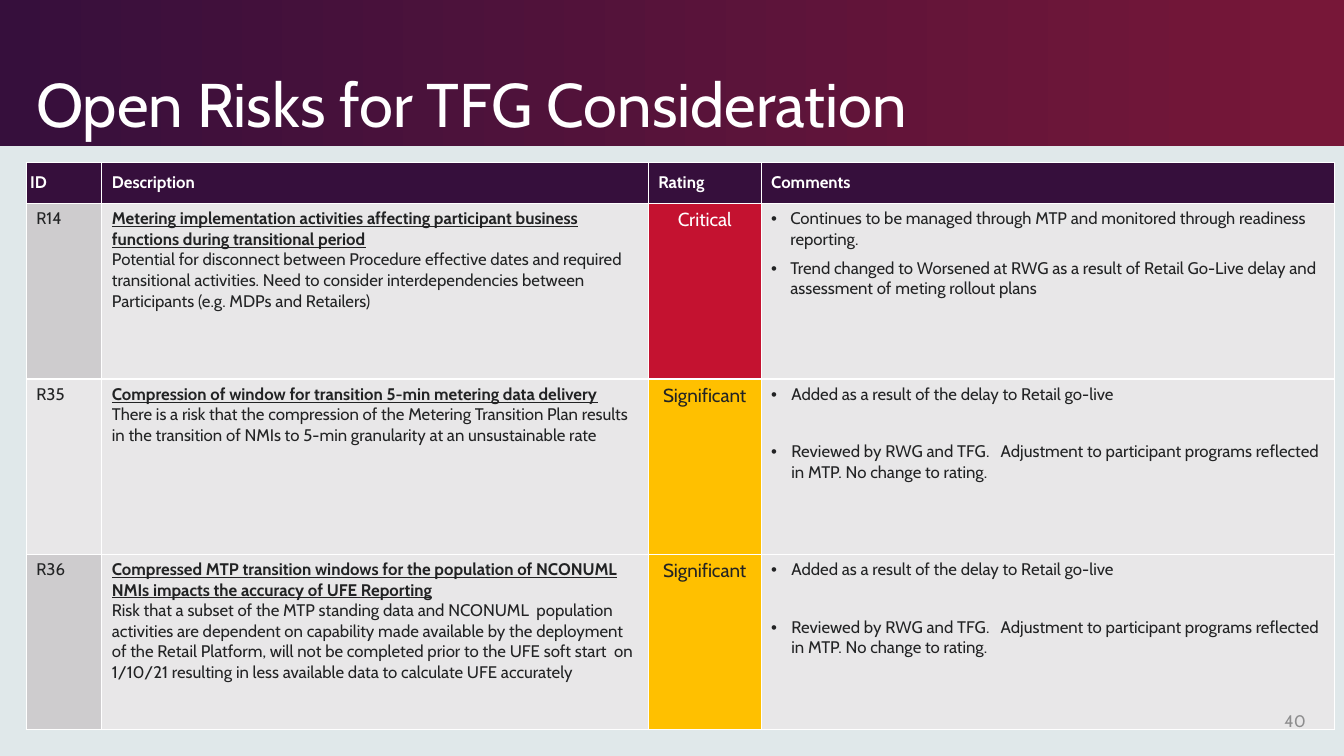
from lxml import etree
from pptx import Presentation
from pptx.dml.color import RGBColor
from pptx.enum import shapes, text
from pptx.oxml import ns
from pptx.util import Inches, Pt

FONT = "Cabin"
PLUM, WHITE, INK = "360F3C", "FFFFFF", "222324"
PALE, GREY, RED, AMBER = "E8E7E8", "CECCCE", "C41230", "FFC000"
COLUMN_WIDTHS = [0.75, 5.42, 1.12, 5.69]
HEADER_HEIGHT, RISK_HEIGHT = 0.41, 1.74
HEADINGS = ["ID", "Description", "Rating", "Comments"]
RATINGS = {"Critical": (RED, WHITE), "Significant": (AMBER, INK)}
DELAY_COMMENTS = [
    "Added as a result of the delay to Retail go-live",
    "Reviewed by RWG and TFG.   Adjustment to participant programs reflected in MTP. "
    "No change to rating.",
]
# ID, ID fill, risk title, risk detail, rating, comments, bullet indent, space after comment
RISKS = [
    ("R14", GREY,
     "Metering implementation activities affecting participant business functions "
     "during transitional period",
     "Potential for disconnect between Procedure effective dates and required transitional "
     "activities. Need to consider interdependencies between Participants "
     "(e.g. MDPs and Retailers)",
     "Critical",
     ["Continues to be managed through MTP and monitored through readiness reporting.",
      "Trend changed to Worsened at RWG as a result of Retail Go-Live delay and "
      "assessment of\u00a0meting rollout plans"], 0.19, 6),
    ("R35", PALE,
     "Compression of window for transition 5-min metering data delivery",
     "There is a risk that the compression of the Metering Transition Plan results in the "
     "transition of NMIs to 5-min granularity at an unsustainable rate",
     "Significant", DELAY_COMMENTS, 0.2, 26.5),
    ("R36", GREY,
     "Compressed MTP transition windows for the population of NCONUML NMIs impacts the "
     "accuracy of UFE Reporting",
     "Risk that a subset of the MTP standing data and NCONUML  population activities are "
     "dependent on capability made available by the deployment of the Retail Platform, will "
     "not be completed prior to the UFE soft start  on 1/10/21 resulting in less available "
     "data to calculate UFE accurately",
     "Significant", DELAY_COMMENTS, 0.2, 26.5),
]


def rgb(color):
    return RGBColor.from_string(color)


def style(paragraph, size, color, bold=False, underline=False):
    font = paragraph.font
    font.name, font.size, font.bold, font.underline = FONT, Pt(size), bold, underline
    font.color.rgb = rgb(color)


def add_label(slide, box, words, size, color, anchor, align):
    frame = slide.shapes.add_textbox(*map(Inches, box)).text_frame
    frame.word_wrap = True
    frame.vertical_anchor = anchor
    paragraph = frame.paragraphs[0]
    paragraph.text = words
    paragraph.alignment = align
    style(paragraph, size, color)
    return paragraph


def add_banner(slide, left, top, width, height):
    banner = slide.shapes.add_shape(
        shapes.MSO_SHAPE.RECTANGLE, *map(Inches, (left, top, width, height)))
    banner.shadow.inherit = False
    banner.line.fill.background()
    banner.fill.gradient()
    banner.fill.gradient_angle = 0
    for stop, position, color in zip(banner.fill.gradient_stops, (0, 0.99), (PLUM, "771738")):
        stop.position = position
        stop.color.rgb = rgb(color)
    title = add_label(slide, (left + 0.26, top + 0.15, 9.84, height - 0.15),
                      "Open Risks for TFG Consideration", 44, WHITE,
                      text.MSO_ANCHOR.BOTTOM, text.PP_ALIGN.LEFT)
    title.line_spacing = 0.9


def paint_cell(cell, color):
    """Fill the cell and rule its four sides in white."""
    cell.fill.solid()
    cell.fill.fore_color.rgb = rgb(color)
    properties = cell._tc.get_or_add_tcPr()
    for position, side in enumerate(("lnL", "lnR", "lnT", "lnB")):
        line = etree.Element(ns.qn(f"a:{side}"), w=str(Pt(1)))
        fill = etree.SubElement(line, ns.qn("a:solidFill"))
        etree.SubElement(fill, ns.qn("a:srgbClr"), val=WHITE)
        properties.insert(position, line)


def write_cell(cell, lines, color, size=12, bold=False):
    cell.text_frame.text = "\n".join(lines)
    for paragraph in cell.text_frame.paragraphs:
        style(paragraph, size, color, bold)
    return cell.text_frame.paragraphs


def add_bullet(paragraph, indent):
    properties = paragraph._p.get_or_add_pPr()
    properties.set("marL", str(Inches(indent)))
    properties.set("indent", str(-Inches(indent)))
    font = etree.Element(ns.qn("a:buFont"), typeface="Arial")
    bullet = etree.Element(ns.qn("a:buChar"), char="•")
    defaults = properties.find(ns.qn("a:defRPr"))
    defaults.addprevious(font)
    defaults.addprevious(bullet)


def fill_risk_row(cells, risk):
    number, number_fill, title, detail, rating, comments, indent, gap = risk
    rating_fill, rating_color = RATINGS[rating]
    for cell, color in zip(cells, (number_fill, PALE, rating_fill, PALE)):
        paint_cell(cell, color)
    write_cell(cells[0], [number], INK)
    style(write_cell(cells[1], [title, detail], INK)[0], 12, INK, True, True)
    write_cell(cells[2], [rating], rating_color, 13.5)[0].alignment = text.PP_ALIGN.CENTER
    for paragraph in write_cell(cells[3], comments, INK):
        paragraph.space_after = Pt(gap)
        add_bullet(paragraph, indent)


def add_risk_table(slide, left, top):
    height = HEADER_HEIGHT + RISK_HEIGHT * len(RISKS)
    table = slide.shapes.add_table(
        len(RISKS) + 1, len(HEADINGS),
        *map(Inches, (left, top, sum(COLUMN_WIDTHS), height))).table
    table.horz_banding = False
    for column, width in zip(table.columns, COLUMN_WIDTHS):
        column.width = Inches(width)
    header, *risk_rows = table.rows
    header.height = Inches(HEADER_HEIGHT)
    for cell, heading in zip(header.cells, HEADINGS):
        paint_cell(cell, PLUM)
        cell.vertical_anchor = text.MSO_ANCHOR.MIDDLE
        write_cell(cell, [heading], WHITE, bold=True)
    table.cell(0, 0).margin_left = table.cell(0, 0).margin_right = Inches(0.04)
    for row, risk in zip(risk_rows, RISKS):
        row.height = Inches(RISK_HEIGHT)
        fill_risk_row(list(row.cells), risk)


def main():
    presentation = Presentation()
    presentation.slide_width, presentation.slide_height = Inches(13.33), Inches(7.5)
    slide = presentation.slides.add_slide(presentation.slide_layouts[6])
    slide.background.fill.solid()
    slide.background.fill.fore_color.rgb = rgb("E0E8EA")
    add_banner(slide, 0, 0, 13.33, 1.45)
    add_risk_table(slide, 0.26, 1.61)
    add_label(slide, (12.42, 6.95, 0.63, 0.4), "40", 12, "8D8D8E",
              text.MSO_ANCHOR.MIDDLE, text.PP_ALIGN.RIGHT)
    presentation.save("out.pptx")


if __name__ == "__main__":
    main()
